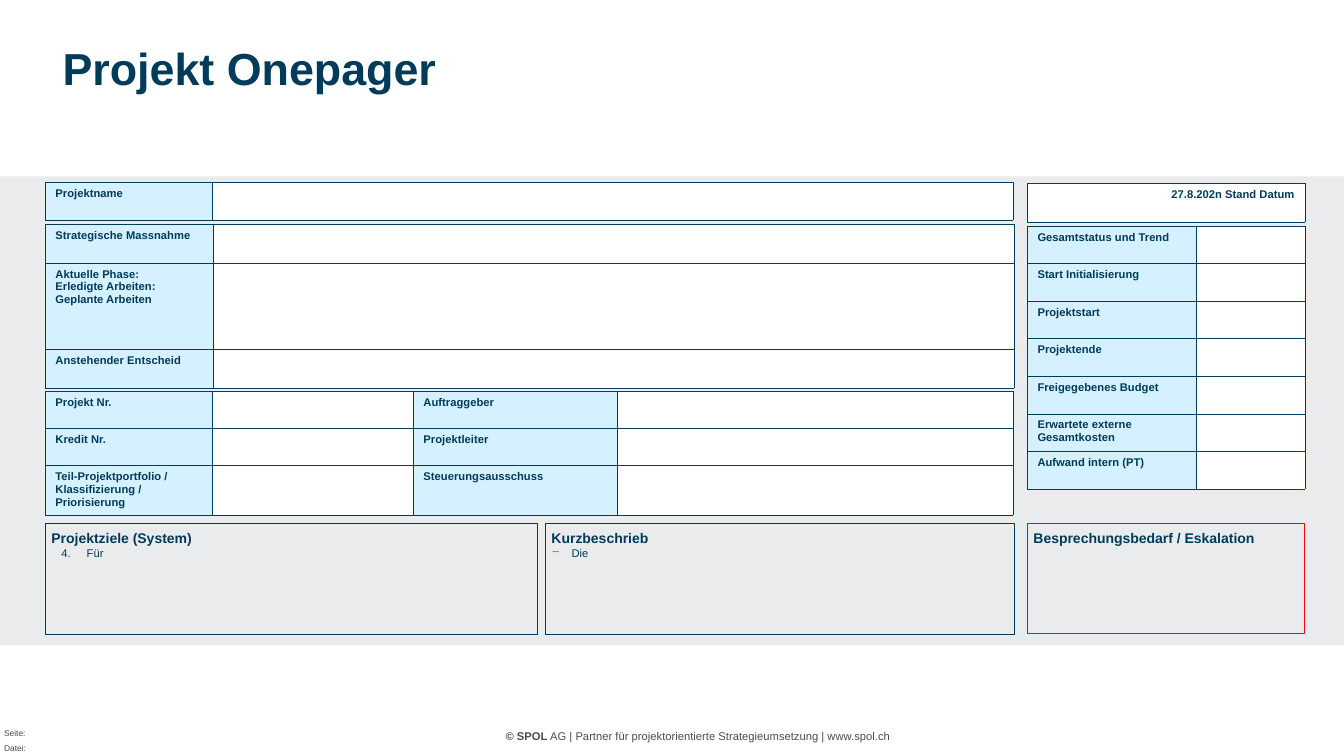
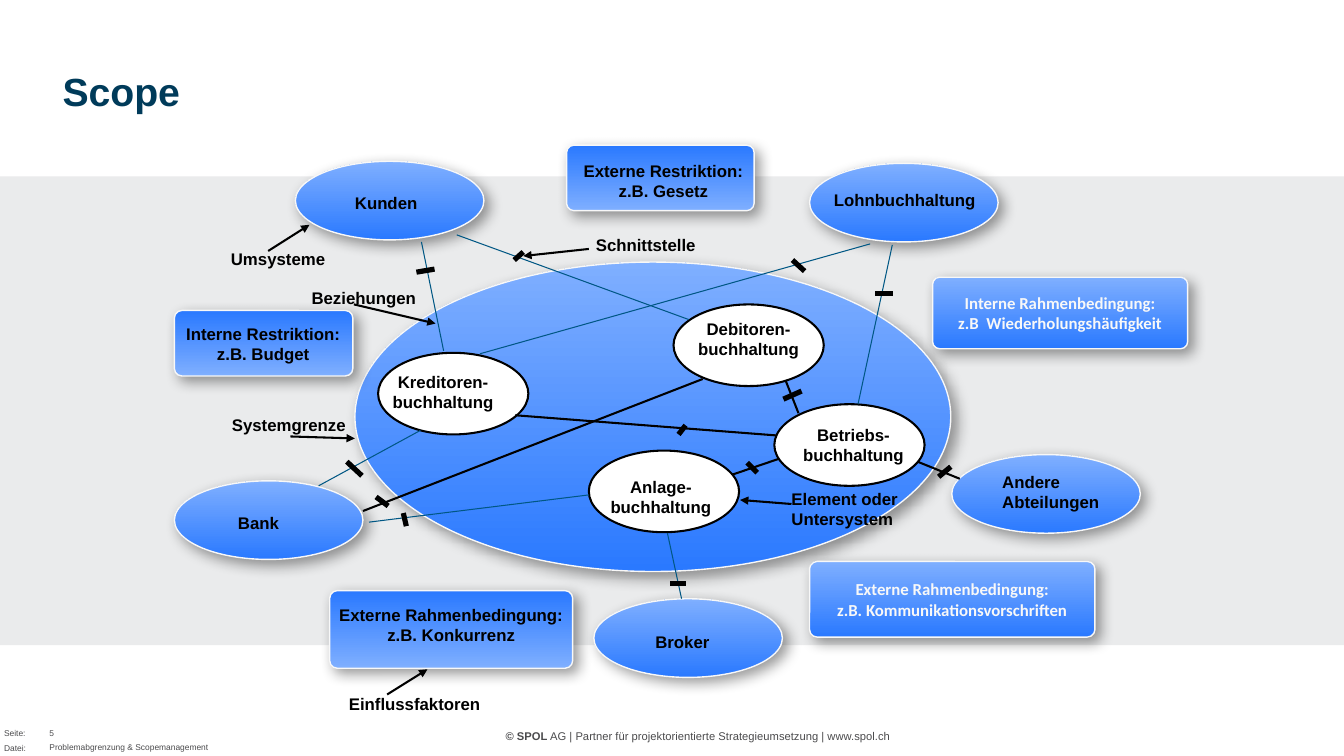
"""Build a project one-pager form and a scope diagram for accounting systems."""
from lxml import etree
from pptx import Presentation
from pptx import util as u
from pptx.dml.color import RGBColor
from pptx.enum import shapes, text
from pptx.oxml.ns import qn

COLORS = {
    "navy": "003B5A", "band": "EAEBEC", "label": "D5F1FF", "white": "FFFFFF",
    "footer": "4B4B4D", "number": "505052", "red": "FF0000", "black": "000000",
    "deep": "2A79FF", "light": "7FAFFF", "edge": "F8F8F8", "thin": "005784",
}
ALIGN = text.PP_ALIGN
ANCHOR = text.MSO_ANCHOR
SHAPE = shapes.MSO_SHAPE

FOOTER_LEAD = "© SPOL"
FOOTER = " AG | Partner für projektorientierte Strategieumsetzung | www.spol.ch"
FOOTER_LABELS = [("Datei:", 7.37), ("Seite:", 7.22)]

TABLES = [
    {"at": (0.45, 2.22), "cols": [1.66, 7.95], "rows": [0.39, 0.85, 0.39],
     "cells": [["Strategische Massnahme", ""],
               ["Aktuelle Phase:\nErledigte Arbeiten:\nGeplante Arbeiten", ""],
               ["Anstehender Entscheid", ""]]},
    {"at": (10.19, 2.24), "cols": [1.67, 1.08], "rows": [0.373] * 7,
     "cells": [[label, ""] for label in (
         "Gesamtstatus und Trend", "Start Initialisierung", "Projektstart", "Projektende",
         "Freigegebenes Budget", "Erwartete externe Gesamtkosten", "Aufwand intern (PT)")]},
    {"at": (0.45, 3.88), "cols": [1.65, 2, 2.02, 3.93], "rows": [0.37, 0.37, 0.49],
     "cells": [["Projekt Nr.", "", "Auftraggeber", ""],
               ["Kredit Nr.", "", "Projektleiter", ""],
               ["Teil-Projektportfolio / Klassifizierung / Priorisierung", "",
                "Steuerungsausschuss", ""]]},
    {"at": (10.19, 1.82), "cols": [2.75], "rows": [0.38], "label_fill": "white",
     "align": ALIGN.RIGHT, "cells": [["27.8.202n Stand Datum"]]},
    {"at": (0.45, 1.81), "cols": [1.65, 7.95], "rows": [0.37], "cells": [["Projektname", ""]]},
]

NUMBERED = ("buAutoNum", {"type": "arabicPeriod", "startAt": "4"}, 0.35, 0.25)
DASHED = ("buChar", {"char": "−"}, 0.2, 0.2)
PANELS = [
    ((0.45, 5.19, 4.88, 1.1), "navy", "Projektziele (System)", "Für", NUMBERED),
    ((5.41, 5.19, 4.65, 1.1), "navy", "Kurzbeschrieb", "Die", DASHED),
    ((10.19, 5.19, 2.75, 1.09), "red", "Besprechungsbedarf / Eskalation", "", None),
]

SYSTEM = (3.52, 2.6, 5.91, 3.07)
SURROUNDING_SIZE = (1.87, 0.78)
SURROUNDINGS = [(2.93, 1.6), (8.03, 1.62), (9.44, 4.51), (1.73, 4.77), (5.89, 5.94)]
ELEMENT_SIZE = (1.49, 0.81)
ELEMENTS = [(3.75, 3.5), (6.68, 3.02), (7.68, 4.01), (5.84, 4.47)]
RESTRICTIONS = [
    ((5.62, 1.44, 1.86, 0.65), 0.113),
    ((1.73, 3.08, 1.77, 0.65), 0.115),
    ((3.27, 5.86, 2.41, 0.77), 0.098),
]
CONDITIONS = [
    ((8.03, 5.57, 2.83, 0.75), "Externe Rahmenbedingung:\nz.B. Kommunikationsvorschriften"),
    ((9.25, 2.75, 2.53, 0.71), "Interne Rahmenbedingung:\nz.B  Wiederholungshäufigkeit"),
]
CENTERED_LABELS = [
    ("Interne Restriktion:\nz.B. Budget", (1.82, 3.21, 1.58, 0.42)),
    ("Externe Rahmenbedingung:\nz.B. Konkurrenz", (3.25, 6, 2.45, 0.44)),
    ("Externe Restriktion:\nz.B. Gesetz", (5.77, 1.59, 1.62, 0.4)),
    ("Kreditoren-\nbuchhaltung", (3.85, 3.69, 1.09, 0.42)),
    ("Debitoren-\nbuchhaltung", (6.88, 3.16, 1.09, 0.42)),
    ("Betriebs-\nbuchhaltung", (7.92, 4.21, 1.09, 0.42)),
    ("Anlage-\nbuchhaltung", (6.01, 4.73, 1.09, 0.42)),
]
LEFT_LABELS = [
    ("Kunden", (3.52, 1.91, 0.65, 0.2)),
    ("Andere\nAbteilungen", (9.94, 4.68, 1.02, 0.42)),
    ("Bank", (2.36, 5.09, 0.65, 0.2)),
    ("Lohnbuchhaltung", (8.27, 1.88, 1.47, 0.2)),
    ("Broker", (6.5, 6.27, 0.73, 0.2)),
    ("Systemgrenze", (2.3, 4.11, 1.22, 0.2)),
    ("Umsysteme", (2.29, 2.47, 1.02, 0.2)),
    ("Beziehungen", (3.09, 2.85, 1.12, 0.2)),
    ("Element oder\nUntersystem", (7.85, 4.85, 1.14, 0.42)),
    ("Schnittstelle", (5.91, 2.33, 1.03, 0.2)),
    ("Einflussfaktoren", (3.46, 6.88, 1.88, 0.23)),
]
LINES = [
    {"color": "thin", "width": 0.75, "arrow": False, "ends": [
        (4.18, 2.4, 4.4, 3.48), (8.63, 2.42, 4.76, 3.51), (3.16, 4.82, 4.17, 4.27),
        (3.66, 5.18, 5.84, 4.91), (4.53, 2.33, 6.83, 3.17), (8.85, 2.43, 8.51, 4.01),
        (6.62, 5.29, 6.76, 5.94)]},
    {"color": "black", "width": 1.48, "arrow": False, "ends": [
        (9.1, 4.58, 9.52, 4.75), (3.6, 5.07, 6.97, 3.76), (7.26, 4.71, 7.73, 4.55),
        (5.11, 4.12, 7.7, 4.32), (7.79, 3.77, 7.92, 4.1)]},
    {"color": "black", "width": 3.71, "arrow": False, "ends": [
        (5.1, 2.58, 5.19, 2.5), (4.13, 2.7, 4.31, 2.67), (7.86, 2.58, 7.98, 2.69),
        (8.68, 2.91, 8.86, 2.91), (7.77, 3.96, 7.95, 3.88), (3.44, 4.58, 3.59, 4.72),
        (3.73, 4.93, 3.85, 5.02), (4, 5.09, 4.03, 5.22), (6.65, 5.79, 6.8, 5.79),
        (6.8, 4.22, 6.73, 4.31), (7.41, 4.59, 7.51, 4.69), (9.31, 4.73, 9.43, 4.63)]},
    {"color": "black", "width": 1.48, "arrow": True, "ends": [
        (2.88, 4.33, 3.52, 4.35), (2.66, 2.49, 3.07, 2.23), (7.85, 5, 7.34, 4.96),
        (3.51, 3.02, 4.32, 3.21), (5.84, 2.47, 5.19, 2.54), (3.84, 6.89, 4.24, 6.64)]},
]


def rgb(name):
    return RGBColor.from_string(COLORS[name])


def inches(values):
    return [u.Inches(value) for value in values]


def add_element(parent, tag, **attributes):
    return etree.SubElement(parent, qn("a:" + tag), attributes)


def write(frame, content, size=12, color="black", bold=True, font="Arial",
          align=ALIGN.LEFT, lead=""):
    """Append formatted paragraphs, one per line, and return the last."""
    for line in content.split("\n"):
        paragraph = frame.add_paragraph() if frame.text else frame.paragraphs[0]
        paragraph.alignment = align
        for part, strong in ((lead, True), (line, bold)):
            if part:
                run = paragraph.add_run()
                run.text = part
                run.font.size, run.font.bold, run.font.name = u.Pt(size), strong, font
                run.font.color.rgb = rgb(color)
    return paragraph


def set_frame(frame, anchor=ANCHOR.TOP, inset_x=0, inset_y=0):
    frame.word_wrap = True
    frame.auto_size = text.MSO_AUTO_SIZE.NONE
    frame.vertical_anchor = anchor
    frame.margin_left = frame.margin_right = u.Inches(inset_x)
    frame.margin_top = frame.margin_bottom = u.Inches(inset_y)
    return frame


def add_text(slide, content, at, anchor=ANCHOR.TOP, **style):
    box = slide.shapes.add_textbox(*inches(at))
    write(set_frame(box.text_frame, anchor), content, **style)


def add_shape(slide, kind, at, fill=None, line=None, width=1):
    shape = slide.shapes.add_shape(kind, *inches(at))
    shape.shadow.inherit = False
    if fill:
        shape.fill.solid()
        shape.fill.fore_color.rgb = rgb(fill)
    else:
        shape.fill.background()
    if line:
        shape.line.color.rgb = rgb(line)
        shape.line.width = u.Pt(width)
    else:
        shape.line.fill.background()
    return shape


def add_glossy(slide, kind, at, angle=90, corner=None):
    shape = add_shape(slide, kind, at, line="edge")
    if corner:
        shape.adjustments[0] = corner
    shape.fill.gradient()
    shape.fill.gradient_angle = angle
    for stop, color in zip(shape.fill.gradient_stops, ("deep", "light")):
        stop.color.rgb = rgb(color)
    effects = shape._element.spPr.find(qn("a:effectLst"))
    shadow = add_element(effects, "outerShdw", blurRad=str(u.Pt(10)), dist=str(u.Pt(5)),
                         dir="2700000", algn="tl", rotWithShape="0")
    add_element(add_element(shadow, "srgbClr", val=COLORS["black"]), "alpha", val="40000")
    return shape


def add_line(slide, ends, color, width, arrow):
    connector = slide.shapes.add_connector(shapes.MSO_CONNECTOR.STRAIGHT, *inches(ends))
    connector.line.color.rgb = rgb(color)
    connector.line.width = u.Pt(width)
    properties = connector._element.spPr
    if arrow:
        add_element(properties.find(qn("a:ln")), "tailEnd", type="triangle")
    add_element(properties, "effectLst")


def fill_cell(cell, content, fill, align):
    properties = cell._tc.get_or_add_tcPr()
    for side in "LRTB":
        border = add_element(properties, "ln" + side, w=str(u.Pt(0.25)))
        add_element(add_element(border, "solidFill"), "srgbClr", val=COLORS["navy"])
    cell.fill.solid()
    cell.fill.fore_color.rgb = rgb(fill)
    paragraph = write(cell.text_frame, content, size=8, color="navy", align=align)
    if not content:
        paragraph._p.get_or_add_endParaRPr().set("sz", "800")


def add_table(slide, at, cols, rows, cells, label_fill="label", align=ALIGN.LEFT):
    frame = slide.shapes.add_table(len(rows), len(cols),
                                   *inches((*at, sum(cols), sum(rows))))
    table = frame.table
    table.first_row = table.horz_banding = False
    for column, width in zip(table.columns, cols):
        column.width = u.Inches(width)
    for row, height, contents in zip(table.rows, rows, cells):
        row.height = u.Inches(height)
        for cell, content in zip(row.cells, contents):
            fill_cell(cell, content, label_fill if content else "white", align)


def add_panel(slide, at, line, heading, item, bullet):
    shape = add_shape(slide, SHAPE.RECTANGLE, at, line=line, width=0.25)
    frame = set_frame(shape.text_frame, inset_x=0.06, inset_y=0.06)
    write(frame, heading, size=10, color="navy")
    if item:
        tag, attributes, margin, hanging = bullet
        paragraph = write(frame, item, size=8, color="navy", bold=False)
        properties = paragraph._p.get_or_add_pPr()
        properties.set("marL", str(u.Inches(margin)))
        properties.set("indent", str(-u.Inches(hanging)))
        add_element(properties, tag, **attributes)


def start_slide(presentation, heading, size, height):
    slide = presentation.slides.add_slide(presentation.slide_layouts[5])
    title = slide.shapes.title
    title.left, title.top, title.width, title.height = inches((0.52, 0.28, 9.85, height))
    write(set_frame(title.text_frame, ANCHOR.MIDDLE, inset_x=0.1), heading, size, "navy")
    add_shape(slide, SHAPE.RECTANGLE, (0, 1.75, 13.33, 4.65), fill="band")
    add_text(slide, FOOTER, (3.41, 7.13, 7.03, 0.24), ANCHOR.BOTTOM, size=8,
             color="footer", bold=False, align=ALIGN.CENTER, lead=FOOTER_LEAD)
    for label, top in FOOTER_LABELS:
        add_text(slide, label, (0.04, top, 0.29, 0.1), size=6, color="footer", bold=False)
    return slide


def build_onepager(presentation):
    slide = start_slide(presentation, "Projekt Onepager", 32, 0.79)
    for table in TABLES:
        add_table(slide, **table)
    for panel in PANELS:
        add_panel(slide, *panel)


def build_scope(presentation):
    slide = start_slide(presentation, "Scope", 28, 1.25)
    add_text(slide, "5", (0.49, 7.2, 0.47, 0.12), ANCHOR.BOTTOM, size=6,
             color="number", bold=False)
    add_text(slide, "Problemabgrenzung & Scopemanagement", (0.49, 7.29, 4.39, 0.17),
             ANCHOR.BOTTOM, size=6, color="footer", bold=False)
    for at in [SYSTEM] + [place + SURROUNDING_SIZE for place in SURROUNDINGS]:
        add_glossy(slide, SHAPE.OVAL, at)
    for at, corner in RESTRICTIONS:
        add_glossy(slide, SHAPE.ROUNDED_RECTANGLE, at, angle=270, corner=corner)
    for at, content in CONDITIONS:
        shape = add_glossy(slide, SHAPE.ROUNDED_RECTANGLE, at, corner=0.099)
        frame = set_frame(shape.text_frame, ANCHOR.MIDDLE, 0.1, 0.05)
        write(frame, content, color="edge", font="Calibri", align=ALIGN.CENTER)
    for place in ELEMENTS:
        add_shape(slide, SHAPE.OVAL, place + ELEMENT_SIZE, "white", "black", 1.48)
    for group in LINES:
        for ends in group["ends"]:
            add_line(slide, ends, group["color"], group["width"], group["arrow"])
    for labels, align in ((CENTERED_LABELS, ALIGN.CENTER), (LEFT_LABELS, ALIGN.LEFT)):
        for content, at in labels:
            add_text(slide, content, at, align=align)


def main():
    presentation = Presentation()
    presentation.slide_width, presentation.slide_height = inches((13.33, 7.5))
    build_onepager(presentation)
    build_scope(presentation)
    presentation.save("out.pptx")


if __name__ == "__main__":
    main()
